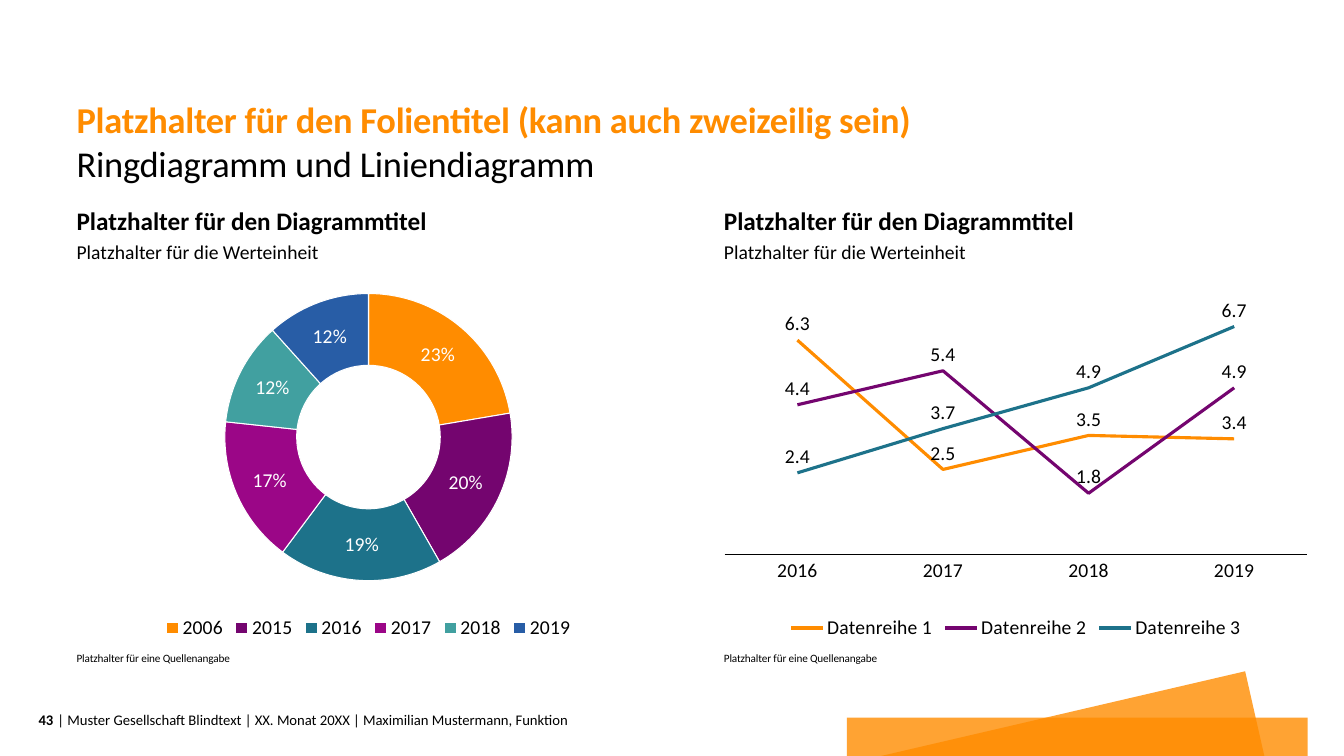
import dataclasses
import pptx
import pptx.chart.data
import pptx.dml.color
import pptx.enum.chart
import pptx.enum.shapes
import pptx.enum.text
import pptx.oxml
import pptx.oxml.ns
import pptx.util

Inches = pptx.util.Inches
Pt = pptx.util.Pt
CHART = pptx.enum.chart
ANCHOR = pptx.enum.text.MSO_ANCHOR
ALIGN = pptx.enum.text.PP_ALIGN


@dataclasses.dataclass(frozen=True)
class Theme:
    font: str = "Calibri"
    text: str = "000000"
    light: str = "FFFFFF"
    accent: str = "FF8C00"
    palette: tuple = ("FF8C00", "74056F", "1D728A", "9B0687", "41A0A0", "285DA6")
    title: float = 26
    heading: float = 18
    body: float = 14
    footer: float = 10.5
    source: float = 8


def rgb(value):
    return pptx.dml.color.RGBColor.from_string(value)


def write(sp, text, font, size, color, bold=False, align=ALIGN.LEFT,
          anchor=ANCHOR.TOP, line_spacing=1.0, tracking=0):
    tf = sp.text_frame
    tf.word_wrap = True
    tf.auto_size = pptx.enum.text.MSO_AUTO_SIZE.NONE
    tf.vertical_anchor = anchor
    tf.margin_left = tf.margin_top = tf.margin_right = tf.margin_bottom = 0
    p = tf.paragraphs[0]
    pPr = p._p.get_or_add_pPr()
    pPr.set("marL", "0")
    pPr.set("indent", "0")
    pPr.append(pPr.makeelement(pptx.oxml.ns.qn("a:buNone"), {}))
    p.alignment = align
    p.line_spacing = line_spacing
    p.space_before = Pt(0)
    r = p.add_run()
    r.text = text
    r.font.name = font
    r.font.size = Pt(size)
    r.font.bold = bold
    r.font.color.rgb = rgb(color)
    if tracking:
        r._r.get_or_add_rPr().set("spc", str(round(tracking * 100)))


class SlideBuilder:
    def __init__(self, prs, theme):
        self.theme = theme
        self.slide = prs.slides.add_slide(prs.slide_layouts.get_by_name("Comparison"))
        self.holders = {s.placeholder_format.idx: s for s in self.slide.placeholders}

    def text(self, text, box, size, idx=None, **fmt):
        box = [Inches(v) for v in box]
        if idx is None:
            sp = self.slide.shapes.add_textbox(*box)
        else:
            sp = self.holders.pop(idx)
            sp.left, sp.top, sp.width, sp.height = box
        fmt.setdefault("color", self.theme.text)
        write(sp, text, self.theme.font, size, **fmt)

    def translucent(self, sp):
        sp.shadow.inherit = False
        sp.fill.solid()
        sp.fill.fore_color.rgb = rgb(self.theme.accent)
        sp.line.fill.background()
        color = sp._element.spPr.find(".//" + pptx.oxml.ns.qn("a:srgbClr"))
        color.append(color.makeelement(pptx.oxml.ns.qn("a:alpha"), {"val": "80000"}))

    def rectangle(self, box):
        kind = pptx.enum.shapes.MSO_SHAPE.RECTANGLE
        self.translucent(self.slide.shapes.add_shape(kind, *[Inches(v) for v in box]))

    def polygon(self, points):
        start, *rest = [(Inches(x), Inches(y)) for x, y in points]
        builder = self.slide.shapes.build_freeform(*start)
        builder.add_line_segments(rest, close=True)
        self.translucent(builder.convert_to_shape())

    def chart(self, kind, box, categories, series, plot_box):
        data = pptx.chart.data.CategoryChartData()
        data.categories = categories
        for name, values in series:
            data.add_series(name, values)
        chart = self.slide.shapes.add_chart(kind, *[Inches(v) for v in box], data).chart
        chart.has_title = False
        chart.font.name = self.theme.font
        chart.font.size = Pt(self.theme.body)
        chart.font.color.rgb = rgb(self.theme.text)
        chart.has_legend = True
        chart.legend.position = CHART.XL_LEGEND_POSITION.BOTTOM
        chart.legend.include_in_layout = False
        self.place_plot(chart, plot_box)
        return chart

    def place_plot(self, chart, plot_box):
        area = chart._chartSpace.chart.plotArea
        for old in area.findall(pptx.oxml.ns.qn("c:layout")):
            area.remove(old)
        sizes = "".join(f'<c:{tag} val="{v}"/>' for tag, v in zip("xywh", plot_box))
        area.insert(0, pptx.oxml.parse_xml(
            f'<c:layout {pptx.oxml.ns.nsdecls("c")}><c:manualLayout>'
            '<c:layoutTarget val="inner"/><c:xMode val="edge"/><c:yMode val="edge"/>'
            f'{sizes}</c:manualLayout></c:layout>'))

    def labels(self, series, number_format, color):
        labels = series.data_labels
        labels.show_value = True
        labels.number_format = number_format
        labels.number_format_is_linked = False
        labels.font.name = self.theme.font
        labels.font.size = Pt(self.theme.body)
        labels.font.color.rgb = rgb(color)
        return labels

    def doughnut(self, box, categories, values):
        chart = self.chart(CHART.XL_CHART_TYPE.DOUGHNUT, box, categories,
                           [("Series 1", values)], (0.25, 0.06, 0.5, 0.77))
        plot = chart.plots[0]
        plot.vary_by_categories = True
        plot._element.find(pptx.oxml.ns.qn("c:holeSize")).set("val", "65")
        series = plot.series[0]
        for i in range(len(values)):
            fmt = series.points[i].format
            fmt.fill.solid()
            fmt.fill.fore_color.rgb = rgb(self.theme.palette[i])
            fmt.line.color.rgb = rgb(self.theme.light)
            fmt.line.width = Pt(0.75)
        self.labels(series, "0%", self.theme.light)

    def lines(self, box, categories, series):
        chart = self.chart(CHART.XL_CHART_TYPE.LINE, box, categories, series,
                           (0, 0.03, 1, 0.73))
        chart.plots[0].vary_by_categories = False
        for s, color in zip(chart.plots[0].series, self.theme.palette):
            s.smooth = False
            s.marker.style = CHART.XL_MARKER_STYLE.NONE
            s.format.line.color.rgb = rgb(color)
            s.format.line.width = Pt(2.25)
            labels = self.labels(s, "0.0", self.theme.text)
            labels.position = CHART.XL_LABEL_POSITION.ABOVE
        axis = chart.category_axis
        axis.major_tick_mark = CHART.XL_TICK_MARK.NONE
        axis.format.line.color.rgb = rgb(self.theme.text)
        axis.format.line.width = Pt(1)
        scale = chart.value_axis
        scale.has_major_gridlines = False
        scale.minimum_scale, scale.maximum_scale, scale.major_unit = 0, 8, 2
        scale.visible = False


def main():
    prs = pptx.Presentation()
    prs.slide_width, prs.slide_height = Inches(13.33), Inches(7.5)
    theme = Theme()
    s = SlideBuilder(prs, theme)
    left, right, width = 0.76, 7.18, 5.79

    s.rectangle((8.4, 7.12, 4.57, 0.38))
    s.polygon([(12.54, 7.5), (12.35, 6.66), (8.74, 7.5)])
    s.text("| Muster Gesellschaft Blindtext | XX. Monat 20XX | Maximilian Mustermann, Funktion",
           (0.57, 7.05, 7.09, 0.18), theme.footer, anchor=ANCHOR.MIDDLE)
    s.text("43", (0.22, 7.05, 0.31, 0.18), theme.footer, bold=True,
           align=ALIGN.RIGHT, anchor=ANCHOR.MIDDLE)

    s.text("Platzhalter für den Folientitel (kann auch zweizeilig sein)",
           (left, 0.99, 10.71, 0.42), theme.title, idx=0, bold=True, color=theme.accent,
           anchor=ANCHOR.BOTTOM, line_spacing=0.95, tracking=-0.2)
    s.text("Ringdiagramm und Liniendiagramm", (left, 1.43, 10.71, 0.42), theme.title,
           line_spacing=0.95, tracking=-0.2)

    for x, heading_idx, unit_idx in ((left, 1, 2), (right, 3, 4)):
        s.text("Platzhalter für den Diagrammtitel", (x, 2.02, width, 0.31), theme.heading,
               idx=heading_idx, bold=True, line_spacing=1.05)
        s.text("Platzhalter für die Werteinheit", (x, 2.37, width, 0.24), theme.body,
               idx=unit_idx, line_spacing=1.05)
        s.text("Platzhalter für eine Quellenangabe", (x, 6.45, width, 0.14), theme.source,
               anchor=ANCHOR.BOTTOM, line_spacing=1.05, tracking=-0.1)

    s.doughnut((left, 2.69, width, 3.7), ["2006", "2015", "2016", "2017", "2018", "2019"],
               [0.23, 0.2, 0.19, 0.17, 0.12, 0.12])
    s.lines((right, 2.69, width, 3.7), ["2016", "2017", "2018", "2019"],
            [("Datenreihe 1", [6.3, 2.5, 3.5, 3.4]),
             ("Datenreihe 2", [4.4, 5.4, 1.8, 4.9]),
             ("Datenreihe 3", [2.4, 3.7, 4.9, 6.7])])
    prs.save("out.pptx")


if __name__ == "__main__":
    main()
